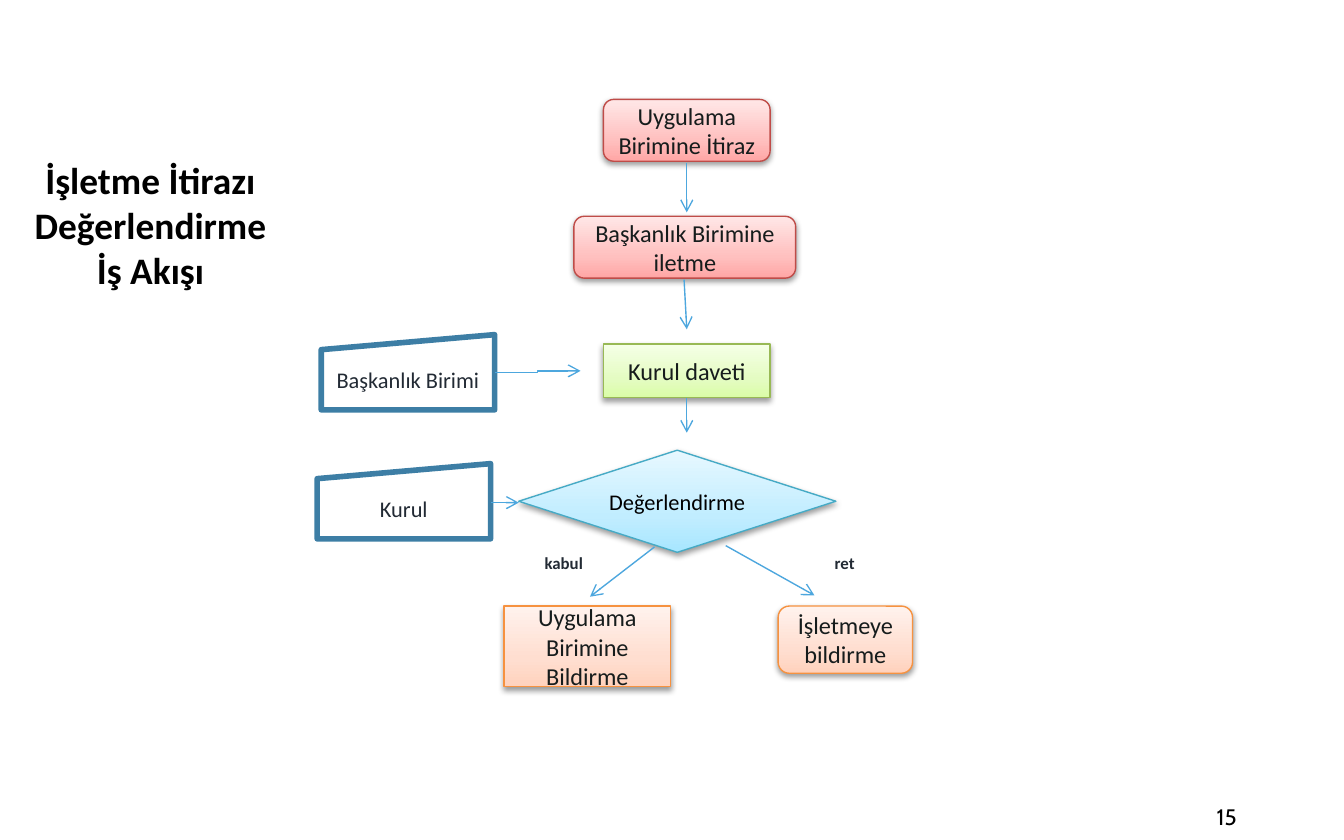
from copy import deepcopy

from lxml import etree
from pptx import Presentation
from pptx.dml.color import RGBColor
from pptx.enum.shapes import MSO_CONNECTOR, MSO_SHAPE
from pptx.enum.text import MSO_ANCHOR, MSO_AUTO_SIZE, PP_ALIGN
from pptx.oxml.ns import qn
from pptx.util import Emu, Pt

PX = 9144  # EMU per px, 100 px to the inch
TITLE_ONLY = 5

ROUNDED, RECT = MSO_SHAPE.ROUNDED_RECTANGLE, MSO_SHAPE.RECTANGLE
DECISION = MSO_SHAPE.FLOWCHART_DECISION
MANUAL_INPUT = MSO_SHAPE.FLOWCHART_MANUAL_INPUT
STRAIGHT, ELBOW = MSO_CONNECTOR.STRAIGHT, MSO_CONNECTOR.ELBOW
CENTER, RIGHT = PP_ALIGN.CENTER, PP_ALIGN.RIGHT
TOP, MIDDLE = MSO_ANCHOR.TOP, MSO_ANCHOR.MIDDLE
NO_AUTOFIT = MSO_AUTO_SIZE.NONE

BLACK = RGBColor(0x00, 0x00, 0x00)
INK = RGBColor(0x16, 0x1C, 0x1C)
SLATE = RGBColor(0x22, 0x2A, 0x34)
ARROW_BLUE = RGBColor(0x4D, 0xA7, 0xDE)
ACTOR_BLUE = RGBColor(0x3D, 0x7E, 0xA5)

# Each palette: outline, then gradient colours from bottom to top
RED = (RGBColor(0xBF, 0x4C, 0x48), RGBColor(0xFF, 0xA6, 0xA5),
       RGBColor(0xFF, 0xC0, 0xBF), RGBColor(0xFF, 0xE7, 0xE7))
GREEN = (RGBColor(0x98, 0xB9, 0x55), RGBColor(0xDA, 0xFD, 0xA7),
         RGBColor(0xE4, 0xFC, 0xC2), RGBColor(0xF5, 0xFF, 0xE7))
BLUE = (RGBColor(0x46, 0xAA, 0xC5), RGBColor(0xA7, 0xE6, 0xFF),
        RGBColor(0xC1, 0xED, 0xFF), RGBColor(0xE7, 0xF8, 0xFF))
ORANGE = (RGBColor(0xF6, 0x92, 0x40), RGBColor(0xFF, 0xD2, 0xBD),
          RGBColor(0xFF, 0xDE, 0xD0), RGBColor(0xFF, 0xF2, 0xED))
GRADIENT_POSITIONS = (0, 0.35, 1)

STEPS = [
    (ROUNDED, (449, 74, 124, 46), RED, "Uygulama Birimine İtiraz", 13, INK),
    (ROUNDED, (427, 161, 165, 46), RED, "Başkanlık Birimine iletme", 13, INK),
    (RECT, (449, 256, 124, 40), GREEN, "Kurul daveti", 13, INK),
    (DECISION, (386, 335, 236, 76), BLUE, "Değerlendirme", 12, BLACK),
    (RECT, (375, 451, 124, 60), ORANGE, "Uygulama Birimine Bildirme", 13, INK),
    (ROUNDED, (579, 451, 100, 50), ORANGE, "İşletmeye bildirme", 13, INK),
]
ACTORS = [
    ((239, 249, 129, 56), "Başkanlık Birimi"),
    ((236, 345, 129, 56), "Kurul"),
]
ARROWS = [
    (STRAIGHT, (511, 121, 511, 158)),
    (STRAIGHT, (509, 208, 511, 245)),
    (STRAIGHT, (511, 296, 511, 322)),
    (ELBOW, (368, 277, 432, 276)),
    (STRAIGHT, (365, 374, 386, 374)),
    (STRAIGHT, (487, 407, 439, 444)),
    (STRAIGHT, (540, 406, 606, 443)),
]
BRANCH_LABELS = [("kabul", 388), ("ret", 597)]


def px(*lengths):
    return [Emu(length * PX) for length in lengths]


def write(shape, lines, size, color, bold=False, font="Calibri",
          align=CENTER, anchor=MIDDLE, insets=(8, 4)):
    frame = shape.text_frame
    frame.word_wrap = True
    frame.auto_size = NO_AUTOFIT
    frame.vertical_anchor = anchor
    side, edge = px(*insets)
    frame.margin_left = frame.margin_right = side
    frame.margin_top = frame.margin_bottom = edge
    frame.text = "\n".join(lines)
    for para in frame.paragraphs:
        para.alignment = align
        para.font.name = font
        para.font.size = Pt(size)
        para.font.bold = bold
        para.font.color.rgb = color


def fill_gradient(shape, colors):
    shape.fill.gradient()
    shape.fill.gradient_angle = 90
    stop_list = shape._element.spPr.find(".//" + qn("a:gsLst"))
    stop_list.append(deepcopy(stop_list[0]))
    stops = shape.fill.gradient_stops
    for stop, color, position in zip(stops, colors, GRADIENT_POSITIONS):
        stop.color.rgb = color
        stop.position = position


def add_soft_shadow(shape):
    effects = shape._element.spPr.find(qn("a:effectLst"))
    shadow = etree.SubElement(effects, qn("a:outerShdw"), blurRad="40000",
                              dist="20000", dir="5400000", rotWithShape="0")
    color = etree.SubElement(shadow, qn("a:srgbClr"), val="000000")
    etree.SubElement(color, qn("a:alpha"), val="38000")


def add_outlined(page, kind, place, color, width):
    shape = page.shapes.add_shape(kind, *px(*place))
    shape.shadow.inherit = False
    shape.line.color.rgb = color
    shape.line.width = Pt(width)
    return shape


def add_step(page, kind, place, palette, text, size, color):
    outline, *colors = palette
    shape = add_outlined(page, kind, place, outline, 0.75)
    fill_gradient(shape, colors)
    add_soft_shadow(shape)
    write(shape, [text], size, color)


def add_actor(page, place, text):
    shape = add_outlined(page, MANUAL_INPUT, place, ACTOR_BLUE, 3)
    shape.fill.background()
    write(shape, [text], 12, SLATE)


def add_arrow(page, kind, ends):
    arrow = page.shapes.add_connector(kind, *px(*ends))
    arrow.line.color.rgb = ARROW_BLUE
    arrow.line.width = Pt(0.75)
    etree.SubElement(arrow.line._get_or_add_ln(), qn("a:tailEnd"), type="arrow")
    etree.SubElement(arrow._element.spPr, qn("a:effectLst"))


def add_text(page, place, text, size, color, **style):
    box = page.shapes.add_textbox(*px(*place))
    write(box, [text], size, color, **style)


def add_title(page, place, lines):
    title = page.shapes.title
    title.left, title.top, title.width, title.height = px(*place)
    write(title, lines, 20, BLACK, bold=True, anchor=TOP)


def main():
    deck = Presentation()
    deck.slide_width, deck.slide_height = px(1000, 625)
    page = deck.slides.add_slide(deck.slide_layouts[TITLE_ONLY])

    add_title(page, (-12, 113, 248, 109),
              ["İşletme İtirazı Değerlendirme", "İş Akışı"])

    # Flow chart
    for step in STEPS:
        add_step(page, *step)
    for actor in ACTORS:
        add_actor(page, *actor)
    for arrow in ARROWS:
        add_arrow(page, *arrow)
    for text, left in BRANCH_LABELS:
        add_text(page, (left, 407, 63, 23), text, 9, SLATE,
                 bold=True, anchor=TOP)

    # Page number
    add_text(page, (697, 591, 233, 33), "15", 12, BLACK,
             font="Cabin", align=RIGHT, insets=(10, 5))

    deck.save("out.pptx")


if __name__ == "__main__":
    main()
